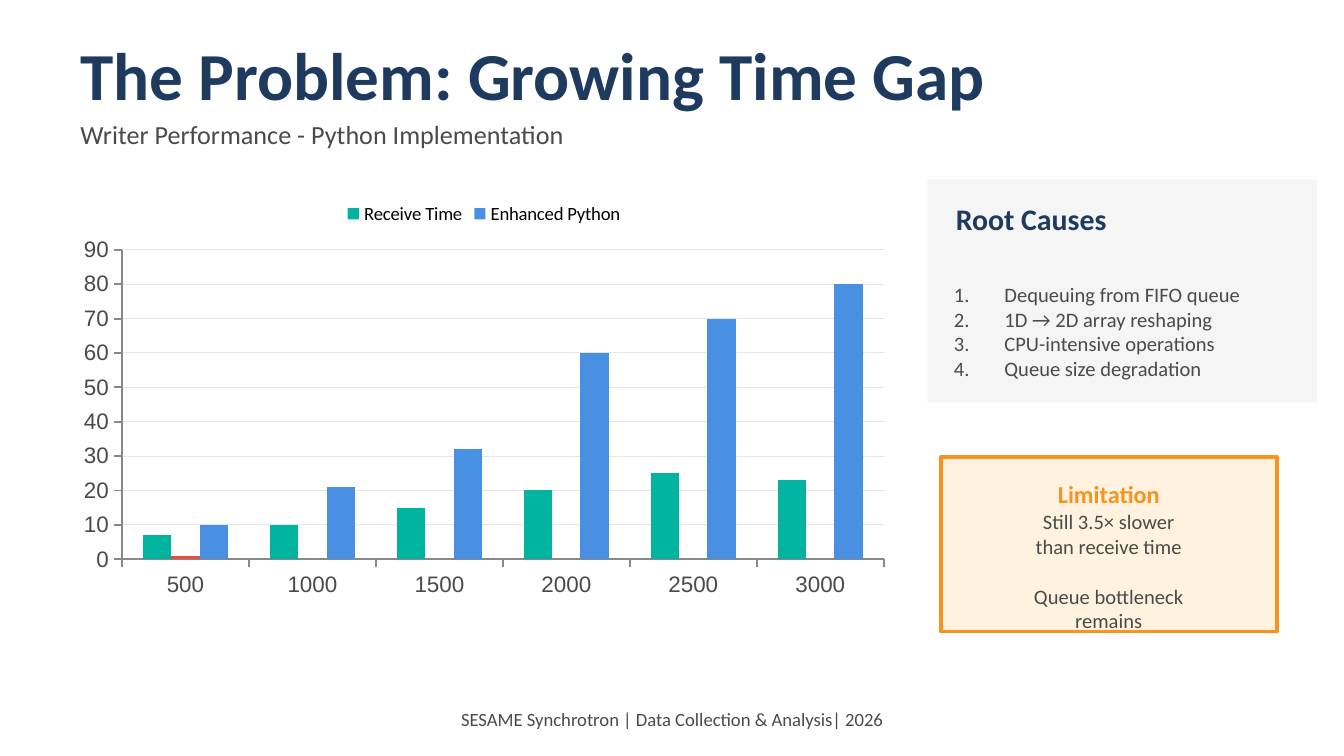
import dataclasses
from typing import Optional

import pptx
import pptx.chart.data
import pptx.dml.color
import pptx.enum.chart
import pptx.enum.shapes
import pptx.enum.text
import pptx.oxml
import pptx.oxml.ns
import pptx.util

EMU_PER_PX = 4572  # 200 px to the inch


@dataclasses.dataclass(frozen=True)
class Theme:
    font: str = "Calibri"
    axis_font: str = "Arial"
    navy: str = "1E3A5F"
    text: str = "4A4A4A"
    black: str = "000000"
    orange: str = "F7931E"
    cream: str = "FFF3E0"
    panel: str = "F5F5F5"
    axis: str = "888888"
    grid: str = "E2E8F0"
    teal: str = "00B4A0"
    red: str = "E74C3C"
    blue: str = "4A90E2"
    title_size: int = 36
    heading_size: int = 16
    subtitle_size: int = 14
    callout_size: int = 13
    axis_size: int = 12
    body_size: int = 11
    small_size: int = 10


THEME = Theme()


@dataclasses.dataclass(frozen=True)
class Box:
    left: int
    top: int
    width: int
    height: int

    def emu(self) -> tuple:
        return tuple(px(side) for side in dataclasses.astuple(self))


@dataclasses.dataclass(frozen=True)
class Panel:
    box: Box
    fill: str
    line: Optional[str] = None


@dataclasses.dataclass(frozen=True)
class Series:
    name: str
    values: tuple
    color: str
    in_legend: bool = True


CATEGORIES = ("500", "1000", "1500", "2000", "2500", "3000")
SERIES = (
    Series("Receive Time", (7, 10, 15, 20, 25, 23), THEME.teal),
    Series("Series 2", (1, None, None, None, None, None), THEME.red, in_legend=False),
    Series("Enhanced Python", (10, 21, 32, 60, 70, 80), THEME.blue),
)
LIMITATION_PANEL = Panel(Box(1400, 680, 500, 260), THEME.cream, THEME.orange)
CAUSES_PANEL = Panel(Box(1380, 267, 580, 332), THEME.panel)


def px(length: int) -> int:
    return pptx.util.Emu(length * EMU_PER_PX)


def rgb(color: str) -> pptx.dml.color.RGBColor:
    return pptx.dml.color.RGBColor.from_string(color)


def set_font(font, size: int, color: str, name: str = THEME.font, bold: bool = False) -> None:
    font.name = name
    font.size = pptx.util.Pt(size)
    font.bold = bold
    font.color.rgb = rgb(color)


def number_paragraph(paragraph, indent: int) -> None:
    """Give the paragraph an automatic number with a hanging indent."""
    properties = paragraph._p.get_or_add_pPr()
    properties.set("marL", str(px(indent)))
    properties.set("indent", str(-px(indent)))
    properties.append(pptx.oxml.parse_xml(
        f'<a:buAutoNum {pptx.oxml.ns.nsdecls("a")} type="arabicPeriod"/>'))


def add_text(slide, box: Box, text: str, *, size: int = THEME.body_size,
             color: str = THEME.text, bold: bool = False, centered: bool = False,
             numbered: bool = False, gap_before: Optional[int] = None,
             gap: float = 0) -> None:
    """Write one paragraph per line; paragraph number gap_before gets gap points above."""
    frame = slide.shapes.add_textbox(*box.emu()).text_frame
    frame.word_wrap = True
    frame.vertical_anchor = pptx.enum.text.MSO_ANCHOR.MIDDLE
    for index, line in enumerate(text.split("\n")):
        paragraph = frame.add_paragraph() if index else frame.paragraphs[0]
        if centered:
            paragraph.alignment = pptx.enum.text.PP_ALIGN.CENTER
        if index and index == gap_before:
            paragraph.space_before = pptx.util.Pt(gap)
        if numbered:
            number_paragraph(paragraph, 75)
        run = paragraph.add_run()
        run.text = line
        set_font(run.font, size, color, bold=bold)


def add_panel(slide, panel: Panel) -> None:
    shape = slide.shapes.add_shape(pptx.enum.shapes.MSO_SHAPE.RECTANGLE, *panel.box.emu())
    shape.shadow.inherit = False
    shape.fill.solid()
    shape.fill.fore_color.rgb = rgb(panel.fill)
    if panel.line:
        shape.line.color.rgb = rgb(panel.line)
        shape.line.width = pptx.util.Pt(2)
    else:
        shape.line.fill.background()


def style_axis(axis) -> None:
    axis.major_tick_mark = pptx.enum.chart.XL_TICK_MARK.OUTSIDE
    axis.minor_tick_mark = pptx.enum.chart.XL_TICK_MARK.NONE
    axis.format.line.color.rgb = rgb(THEME.axis)
    axis.format.line.width = pptx.util.Pt(1)
    set_font(axis.tick_labels.font, THEME.axis_size, THEME.text, THEME.axis_font)


def hide_legend_entry(legend, index: int) -> None:
    entry = pptx.oxml.parse_xml(
        f'<c:legendEntry {pptx.oxml.ns.nsdecls("c")}>'
        f'<c:idx val="{index}"/><c:delete val="1"/></c:legendEntry>')
    legend._element.find(pptx.oxml.ns.qn("c:legendPos")).addnext(entry)


def add_timing_chart(slide, box: Box) -> None:
    data = pptx.chart.data.CategoryChartData()
    data.categories = CATEGORIES
    for series in SERIES:
        data.add_series(series.name, series.values)
    chart = slide.shapes.add_chart(
        pptx.enum.chart.XL_CHART_TYPE.COLUMN_CLUSTERED, *box.emu(), data).chart
    chart.has_title = False
    set_font(chart.font, THEME.small_size, THEME.black)

    chart.has_legend = True
    chart.legend.position = pptx.enum.chart.XL_LEGEND_POSITION.TOP
    chart.legend.include_in_layout = False
    set_font(chart.legend.font, THEME.small_size, THEME.black)

    style_axis(chart.category_axis)
    style_axis(chart.value_axis)
    gridline = chart.value_axis.major_gridlines.format.line
    gridline.color.rgb = rgb(THEME.grid)
    gridline.width = pptx.util.Pt(0.5)

    plot = chart.plots[0]
    plot.vary_by_categories = False
    plot.gap_width = 150
    plot.overlap = 0
    for index, (series, bars) in enumerate(zip(SERIES, plot.series)):
        bars.format.fill.solid()
        bars.format.fill.fore_color.rgb = rgb(series.color)
        if not series.in_legend:
            hide_legend_entry(chart.legend, index)


def main() -> None:
    presentation = pptx.Presentation()
    presentation.slide_width = px(2000)
    presentation.slide_height = px(1125)
    slide = presentation.slides.add_slide(presentation.slide_layouts[6])

    add_text(slide, Box(100, 60, 1800, 100), "The Problem: Growing Time Gap",
             size=THEME.title_size, color=THEME.navy, bold=True)
    add_text(slide, Box(100, 170, 1800, 60), "Writer Performance - Python Implementation",
             size=THEME.subtitle_size)
    add_timing_chart(slide, Box(100, 280, 1240, 620))

    add_panel(slide, LIMITATION_PANEL)
    add_text(slide, Box(1420, 710, 460, 50), "Limitation", size=THEME.callout_size,
             color=THEME.orange, bold=True, centered=True)
    add_text(slide, Box(1420, 780, 460, 140),
             "Still 3.5× slower\nthan receive time\nQueue bottleneck\nremains",
             centered=True, gap_before=2, gap=13.4)

    add_text(slide, Box(100, 1040, 1800, 60),
             "SESAME Synchrotron | Data Collection & Analysis| 2026",
             size=THEME.small_size, centered=True)

    add_panel(slide, CAUSES_PANEL)
    add_text(slide, Box(1403, 296, 540, 60), "Root Causes",
             size=THEME.heading_size, color=THEME.navy, bold=True)
    add_text(slide, Box(1400, 382, 540, 222),
             "Dequeuing from FIFO queue\n1D → 2D array reshaping\n"
             "CPU-intensive operations\nQueue size degradation", numbered=True)

    presentation.save("out.pptx")


if __name__ == "__main__":
    main()
